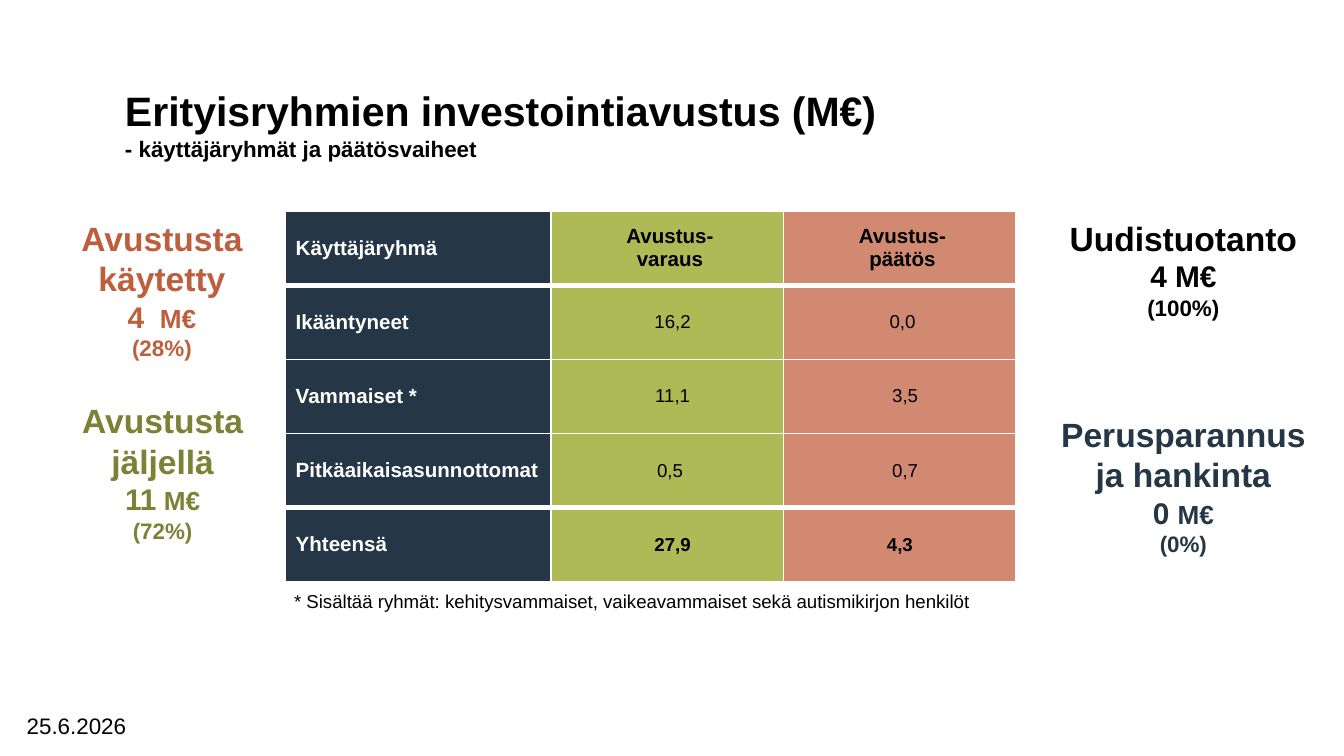
from lxml import etree
from pptx import Presentation
from pptx.dml.color import RGBColor
from pptx.enum.text import MSO_ANCHOR, MSO_AUTO_SIZE, PP_ALIGN
from pptx.oxml.ns import qn
from pptx.util import Inches, Pt

LEFT, CENTER = PP_ALIGN.LEFT, PP_ALIGN.CENTER
MIDDLE = MSO_ANCHOR.MIDDLE
NO_AUTOFIT = MSO_AUTO_SIZE.NONE
TITLE_ONLY = 5
FONT = "Arial"
COLORS = {
    "black": "000000",
    "white": "FFFFFF",
    "navy": "253746",
    "green": "AEBA56",
    "salmon": "D18A71",
    "rust": "BD5F3D",
    "olive": "7A8335",
}
COLUMN_WIDTHS = (1.98, 1.73, 1.73)
COLUMN_FILLS = ("navy", "green", "salmon")
ROWS = (
    ("Käyttäjäryhmä", "Avustus-\nvaraus", "Avustus-\npäätös"),
    ("Ikääntyneet", " 16,2", " 0,0 "),
    ("Vammaiset *", " 11,1", " 3,5"),
    ("Pitkäaikaisasunnottomat", "0,5", " 0,7"),
    ("Yhteensä", " 27,9", "4,3 "),
)
STATISTICS = (
    ((0.5, 1.57, 1.41, 1.05), "rust",
     [[("Avustusta\nkäytetty", 18)], [("4 ", 16), (" M€", 14)], [("(28%)", 12)]]),
    ((0.5, 2.93, 1.42, 1.05), "olive",
     [[("Avustusta jäljellä", 18)], [("11", 16), (" M€", 14)], [("(72%)", 12)]]),
    ((7.76, 1.57, 2.09, 0.8), "black",
     [[("Uudistuotanto\n", 18), ("4 M€\n", 16), ("(100%)", 12)]]),
    ((7.76, 3.03, 2.09, 1.04), "navy",
     [[("Perusparannus ja hankinta\n", 18), ("0 ", 16), ("M€\n", 14), ("(0%)", 12)]]),
)


def add_run(paragraph, text, size, color, bold):
    """Append formatted text to a paragraph, with a line break at each newline."""
    for index, line in enumerate(text.split("\n")):
        if index:
            paragraph.add_line_break()
        if line:
            run = paragraph.add_run()
            run.text = line
            run.font.name = FONT
            run.font.size = Pt(size)
            run.font.bold = bold
            run.font.color.rgb = RGBColor.from_string(COLORS[color])


def write_paragraphs(frame, paragraphs, color="black", bold=False, alignment=LEFT):
    """Fill a text frame with paragraphs, each a list of (text, size) runs."""
    for index, runs in enumerate(paragraphs):
        paragraph = frame.add_paragraph() if index else frame.paragraphs[0]
        paragraph.alignment = alignment
        for text, size in runs:
            add_run(paragraph, text, size, color, bold)


def add_text(slide, box, paragraphs, side_margin=0.1, **style):
    """Add a wrapping text box."""
    shape = slide.shapes.add_textbox(*map(Inches, box))
    frame = shape.text_frame
    frame.word_wrap = True
    frame.margin_left = frame.margin_right = Inches(side_margin)
    write_paragraphs(frame, paragraphs, **style)


def fill_title(slide, box):
    """Place the title and its smaller second line in the placeholder."""
    title = slide.shapes.title
    title.left, title.top, title.width, title.height = map(Inches, box)
    frame = title.text_frame
    frame.auto_size = NO_AUTOFIT
    frame.vertical_anchor = MIDDLE
    runs = [
        ("Erityisryhmien investointiavustus (M€)\n", 22),
        ("- käyttäjäryhmät ja päätösvaiheet", 12),
    ]
    write_paragraphs(frame, [runs], bold=True)


def set_borders(cell, top, bottom):
    """Draw white borders round a cell, with the given top and bottom widths."""
    properties = cell._tc.get_or_add_tcPr()
    for side, width in (("L", 1), ("R", 1), ("T", top), ("B", bottom)):
        line = etree.SubElement(properties, qn(f"a:ln{side}"), w=str(Pt(width)))
        fill = etree.SubElement(line, qn("a:solidFill"))
        etree.SubElement(fill, qn("a:srgbClr"), val=COLORS["white"])


def fill_cell(cell, text, row, column):
    """Format one table cell by its row and column."""
    last = len(ROWS) - 1
    set_borders(cell, 3 if row in (1, last) else 1, 3 if row in (0, last - 1) else 1)
    cell.fill.solid()
    cell.fill.fore_color.rgb = RGBColor.from_string(COLORS[COLUMN_FILLS[column]])
    cell.vertical_anchor = MIDDLE
    cell.margin_left = Inches(0.08)
    cell.margin_right = cell.margin_top = cell.margin_bottom = Inches(0.04)
    is_label = column == 0
    size = 11 if is_label or row == 0 else 10
    write_paragraphs(
        cell.text_frame,
        [[(line, size)] for line in text.split("\n")],
        color="white" if is_label else "black",
        bold=is_label or row in (0, last),
        alignment=LEFT if is_label else CENTER,
    )


def add_grant_table(slide, box):
    """Add the table of grants by user group."""
    frame = slide.shapes.add_table(len(ROWS), len(COLUMN_WIDTHS), *map(Inches, box))
    table = frame.table
    table.first_row = table.horz_banding = False
    for column, width in zip(table.columns, COLUMN_WIDTHS):
        column.width = Inches(width)
    for row, texts in enumerate(ROWS):
        for column, text in enumerate(texts):
            fill_cell(table.cell(row, column), text, row, column)


def add_statistic(slide, box, color, paragraphs):
    """Add a centred heading with its amount and share."""
    add_text(slide, box, paragraphs, 0.05, color=color, bold=True, alignment=CENTER)


def main():
    """Build and save the slide."""
    presentation = Presentation()
    presentation.slide_width = Inches(10)
    presentation.slide_height = Inches(10) * 9 // 16
    slide = presentation.slides.add_slide(presentation.slide_layouts[TITLE_ONLY])
    fill_title(slide, (0.83, 0.73, 6.86, 0.38))
    add_text(slide, (0.1, 5.25, 1.75, 0.25), [[("25.6.2026", 12)]])
    add_grant_table(slide, (2.12, 1.57, 5.44, 2.76))
    for statistic in STATISTICS:
        add_statistic(slide, *statistic)
    footnote = "* Sisältää ryhmät: kehitysvammaiset, vaikeavammaiset sekä autismikirjon henkilöt"
    add_text(slide, (2.09, 4.34, 5.6, 0.29), [[(footnote, 10)]])
    presentation.save("out.pptx")


if __name__ == "__main__":
    main()
